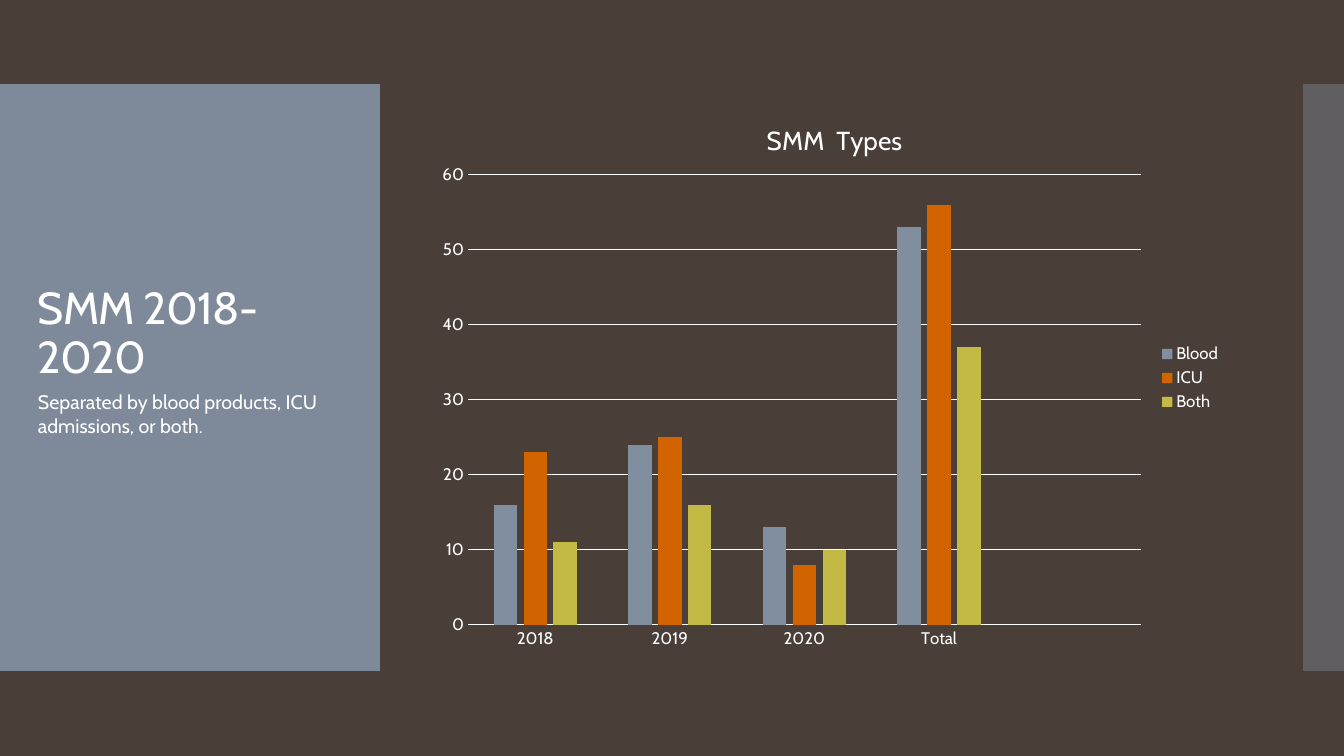
from pptx import Presentation
from pptx.chart.data import CategoryChartData
from pptx.dml.color import RGBColor
from pptx.enum.chart import XL_CHART_TYPE, XL_LEGEND_POSITION, XL_TICK_MARK
from pptx.enum.shapes import MSO_SHAPE
from pptx.enum.text import MSO_ANCHOR
from pptx.oxml import parse_xml
from pptx.oxml.ns import nsdecls, qn
from pptx.util import Pt

WHITE = RGBColor(0xFF, 0xFF, 0xFF)
BROWN = RGBColor(0x4A, 0x3F, 0x38)
SLATE = RGBColor(0x81, 0x8E, 0x9F)
ORANGE = RGBColor(0xD2, 0x64, 0x00)
OLIVE = RGBColor(0xC3, 0xBA, 0x45)
FACE = "Cabin"
WIDE, HIGH = 1344, 756

PANELS = [((0, 84, 380, 587), 95), ((1303, 84, 41, 587), 40)]
TEXTS = [
    ("SMM 2018-2020", (28, 126, 312, 262), MSO_ANCHOR.BOTTOM, 32,
     {"line_spacing": 0.9}, -60),
    ("Separated by blood products, ICU admissions, or both.",
     (28, 385, 312, 256), MSO_ANCHOR.TOP, 14, {"space_before": Pt(12)}, 0),
]
HEAD = "SMM  Types"
YEARS = ["2018", "2019", "2020", "Total", ""]
SERIES = [
    ("Blood", (16, 24, 13, 53, None), SLATE),
    ("ICU", (23, 25, 8, 56, None), ORANGE),
    ("Both", (11, 16, 10, 37, None), OLIVE),
]
FRAME = (426, 96, 806, 564)
PLOT = (468, 175, 673, 450)
TITLE = (762, 117)


def emu(box):
    return [round(v * 12192000 / WIDE) for v in box]


def put(item, values):
    for name, value in values.items():
        setattr(item, name, value)


def style(font, size):
    put(font, {"name": FACE, "size": Pt(size), "bold": False})
    font.color.rgb = WHITE


def paint(fill, color):
    fill.solid()
    fill.fore_color.rgb = color


def stroke(line):
    paint(line.fill, WHITE)
    line.width = Pt(0.75)


def place(node, spot, index, inner=False):
    for old in node.findall(qn("c:layout")):
        node.remove(old)
    left, top, wide, high = FRAME
    parts = [(spot[0] - left) / wide, (spot[1] - top) / high]
    parts += [v / span for v, span in zip(spot[2:], (wide, high))]
    tags = '<c:layoutTarget val="inner"/>' if inner else ""
    tags += '<c:xMode val="edge"/><c:yMode val="edge"/>'
    tags += "".join(f'<c:{k} val="{v:.4f}"/>' for k, v in zip("xywh", parts))
    node.insert(index, parse_xml(
        f'<c:layout {nsdecls("c")}><c:manualLayout>{tags}'
        '</c:manualLayout></c:layout>'))


def panel(slide, box, alpha):
    shape = slide.shapes.add_shape(MSO_SHAPE.RECTANGLE, *emu(box))
    shape.shadow.inherit = False
    paint(shape.fill, SLATE)
    shape.line.fill.background()
    color = shape.fill._xPr.find(".//" + qn("a:srgbClr"))
    color.append(parse_xml(f'<a:alpha {nsdecls("a")} val="{alpha * 1000}"/>'))


def write(slide, text, box, anchor, size, form, track):
    frame = slide.shapes.add_textbox(*emu(box)).text_frame
    put(frame, {"word_wrap": True, "vertical_anchor": anchor})
    para = frame.paragraphs[0]
    put(para, form)
    run = para.add_run()
    run.text = text
    style(run.font, size)
    if track:
        run._r.get_or_add_rPr().set("spc", str(track))


def graph(slide):
    data = CategoryChartData()
    data.categories = YEARS
    for name, values, _ in SERIES:
        data.add_series(name, values)
    chart = slide.shapes.add_chart(
        XL_CHART_TYPE.COLUMN_CLUSTERED, *emu(FRAME), data).chart
    style(chart.font, 10)

    para = chart.chart_title.text_frame.paragraphs[0]
    run = para.add_run()
    run.text = HEAD
    style(run.font, 18.6)
    chart.chart_title.include_in_layout = False
    place(chart.chart_title._element, TITLE, 1)

    plot = chart.plots[0]
    put(plot, {"gap_width": 219, "overlap": -27, "vary_by_categories": False})
    for bars, (_, _, color) in zip(plot.series, SERIES):
        paint(bars.format.fill, color)
    place(chart._chartSpace.chart.plotArea, PLOT, 0, True)

    for axis in (chart.category_axis, chart.value_axis):
        put(axis, {"major_tick_mark": XL_TICK_MARK.NONE,
                   "minor_tick_mark": XL_TICK_MARK.NONE})
        style(axis.tick_labels.font, 12)
    stroke(chart.category_axis.format.line)
    scale = chart.value_axis
    put(scale, {"minimum_scale": 0, "maximum_scale": 60, "major_unit": 10})
    scale.format.line.fill.background()
    stroke(scale.major_gridlines.format.line)

    chart.has_legend = True
    put(chart.legend, {"position": XL_LEGEND_POSITION.RIGHT,
                       "include_in_layout": False})
    style(chart.legend.font, 12)


def main():
    deck = Presentation()
    deck.slide_width, deck.slide_height = emu((WIDE, HIGH))
    slide = deck.slides.add_slide(deck.slide_layouts[6])
    paint(slide.background.fill, BROWN)
    for box, alpha in PANELS:
        panel(slide, box, alpha)
    graph(slide)
    for row in TEXTS:
        write(slide, *row)
    deck.save("out.pptx")


if __name__ == "__main__":
    main()
